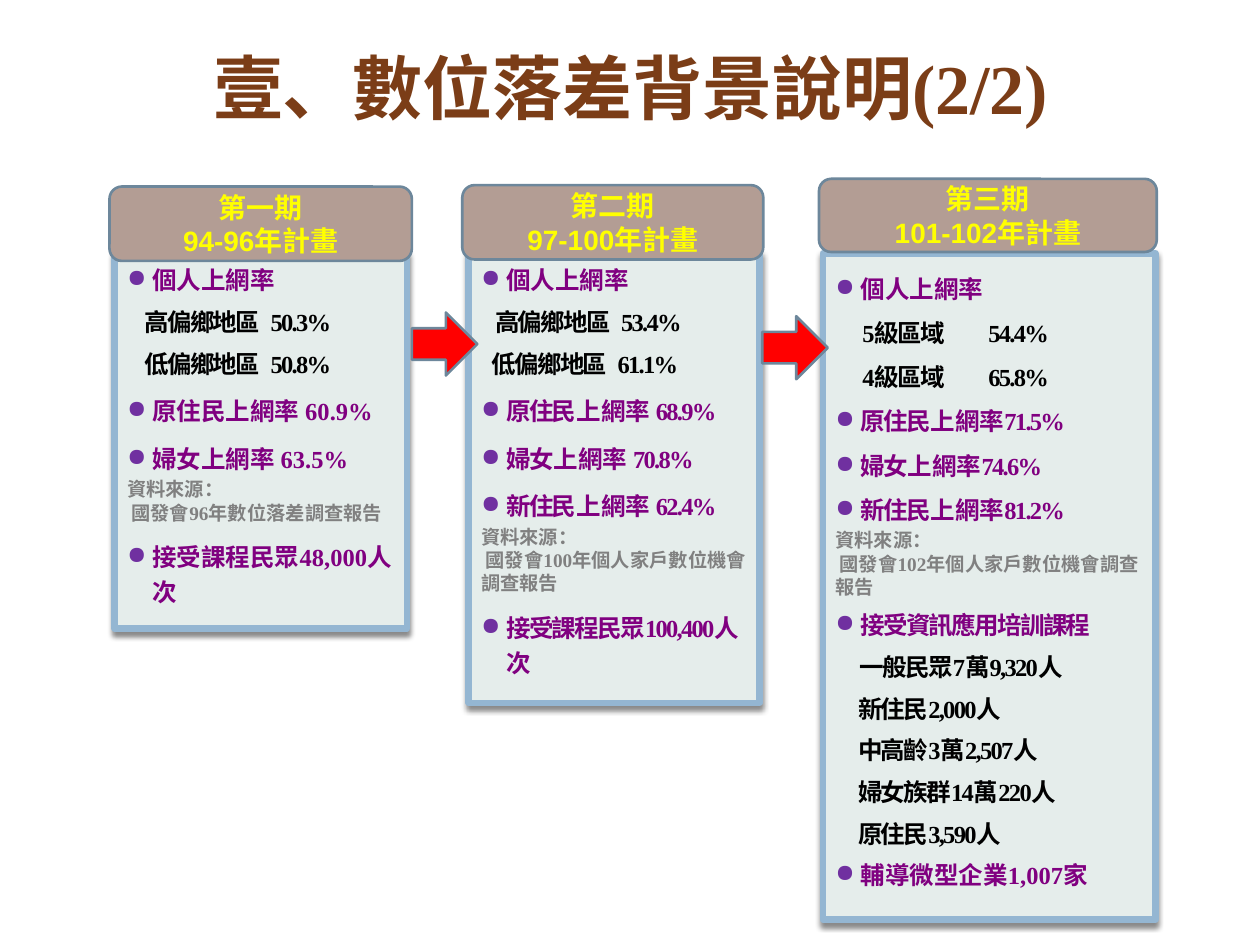
import pptx
import pptx.util
import pptx.dml.color
import pptx.enum.shapes
import pptx.enum.text
import pptx.oxml
import pptx.oxml.ns

Pt = pptx.util.Pt
Kind = pptx.enum.shapes.MSO_SHAPE
Align = pptx.enum.text.PP_ALIGN
Anchor = pptx.enum.text.MSO_ANCHOR
SERIF = "Times New Roman"
NS = pptx.oxml.ns.nsdecls("a")

TITLE = "壹、數位落差背景說明(2/2)"

# Parts between bars alternate between tight and normal letter spacing.
CARDS = [
    {"head": ["第一期", "94-96年計畫"], "tab": 87,
     "top": (62.6, 106.6, 172.8, 42.5), "size": (167, 214.6),
     "rows": [
         ("item", "|個人上網率"),
         ("rate", "高偏鄉地區\t50.3%", 10),
         ("rate", "低偏鄉地區\t50.8%", 10),
         ("item", "|原住民上網率 60.9%"),
         ("item", "|婦女上網率 63.5%"),
         ("label", "|資料來源："),
         ("source", "|國發會96年數位落差調查報告"),
         ("item", "|接受課程民眾48,000人次")]},
    {"head": ["第二期", "97-100年計畫"], "tab": 80,
     "top": (264.2, 105.8, 172, 42.5), "size": (166.3, 257),
     "rows": [
         ("item", "|個人上網率"),
         ("rate", "高偏鄉地區\t53.4%", 8),
         ("rate", "低偏鄉地區\t61.1%", 6),
         ("item", "原住民|上網率 |68.9%"),
         ("item", "婦女|上網率 |70.8%"),
         ("item", "新住民|上網率 |62.4%"),
         ("label", "|資料來源："),
         ("source", "|國發會100年個人家戶數位機會調查報告"),
         ("item", "接受課程民眾100,400人次")]},
    {"head": ["第三期", "101-102年計畫"], "tab": 74,
     "top": (468, 102.2, 193, 41.8), "size": (190, 380.9),
     "rows": [
         ("wide", "|個人上網率"),
         ("area", "5級區域\t54.4%", 15.5),
         ("area", "4級區域\t65.8%", 15.5),
         ("wide", "原住民|上網率|71.5%"),
         ("wide", "婦女|上網率|74.6%"),
         ("wide", "新住民|上網率|81.2%"),
         ("label", "|資料來源："),
         ("source", "|國發會102年個人家戶數位機會調查報告"),
         ("close", "接受資訊應用培訓課程"),
         ("rate", "一般民眾7萬9,320人", 14),
         ("rate", "新住民2,000人", 13),
         ("rate", "中高齡3萬2,507人", 13),
         ("rate", "婦女族群14萬220人", 13),
         ("rate", "原住民3,590人", 13),
         ("close", "|輔導微型企業1,007家")]},
]
ARROWS = [(235.4, 178.6), (435.6, 180.7)]

# Size, colour, line spacing, space before, bullet.
STYLES = {
    "item": (14, "800080", 1.2, 7, True),
    "wide": (14, "800080", 1.5, 0, True),
    "close": (14, "800080", 1.0, 7, True),
    "rate": (14, "000000", 1.0, 7, False),
    "area": (14, "000000", 1.5, 0, False),
    "label": (11, "808080", 1.2, 0, False),
    "source": (11, "808080", 1.0, 0, False),
}


def paint(target, code):
    target.rgb = pptx.dml.color.RGBColor.from_string(code)


def style(font, size, code, face):
    font.size, font.name, font.bold = Pt(size), face, True
    paint(font.color, code)


def add(kind, box, fill, line, width):
    shape = slide.shapes.add_shape(kind, *[Pt(n) for n in box])
    shape.shadow.inherit = False
    shape.fill.solid()
    paint(shape.fill.fore_color, fill)
    paint(shape.line.color, line)
    shape.line.width = Pt(width)
    return shape


def shade(shape):
    glow = shape.element.spPr.find(pptx.oxml.ns.qn("a:effectLst"))
    glow.append(pptx.oxml.parse_xml(
        f'<a:outerShdw {NS} blurRad="{Pt(3)}" dist="{Pt(2.4)}" dir="5400000" '
        'rotWithShape="0"><a:srgbClr val="000000"><a:alpha val="45000"/>'
        '</a:srgbClr></a:outerShdw>'))


def write(para, first, tab, name, text, left=0):
    size, code, space, gap, dot = STYLES[name]
    props = para._p.get_or_add_pPr()
    if dot:
        props.set("marL", str(Pt(14.4)))
        props.set("indent", str(-Pt(14.4)))
        marks = [f'<a:buClr {NS}><a:srgbClr val="7030A0"/></a:buClr>',
                 f'<a:buChar {NS} char="●"/>']
    else:
        props.set("marL", str(Pt(left)))
        props.set("indent", str(Pt(2.5 if name == "source" else 0)))
        marks = [f'<a:buNone {NS}/>']
    if "\t" in text:
        marks.append(f'<a:tabLst {NS}><a:tab pos="{Pt(tab)}" algn="l"/></a:tabLst>')
    for mark in marks:
        props.append(pptx.oxml.parse_xml(mark))
    para.alignment = Align.LEFT
    para.line_spacing = space
    para.space_before = Pt(0 if first else gap)
    for spot, part in enumerate(text.split("|")):
        if part:
            run = para.add_run()
            run.text = part
            style(run.font, size, code, SERIF)
            if spot % 2 == 0:
                run.font._element.set("spc", "-100")


deck = pptx.Presentation()
deck.slide_width, deck.slide_height = Pt(720), Pt(540)
slide = deck.slides.add_slide(deck.slide_layouts[5])

title = slide.shapes.title
title.left, title.top, title.width, title.height = Pt(54.7), Pt(4.3), Pt(611.3), Pt(90)
title.text_frame.text = TITLE
title.text_frame.vertical_anchor = Anchor.MIDDLE
title.text_frame.paragraphs[0].alignment = Align.CENTER
style(title.text_frame.paragraphs[0].runs[0].font, 40, "7B3D17", SERIF)

for spot, card in enumerate(CARDS):
    box = (65.5 + 202.35 * spot, 144.7, *card["size"])
    body = add(Kind.RECTANGLE, box, "E5EDEB", "94B6D2", 3.75)
    shade(body)
    frame = body.text_frame
    frame.word_wrap = True
    frame.vertical_anchor = Anchor.TOP
    for rank, row in enumerate(card["rows"]):
        para = frame.add_paragraph() if rank else frame.paragraphs[0]
        write(para, rank == 0, card["tab"], *row)

    head = add(Kind.ROUNDED_RECTANGLE, card["top"], "B39D94", "6D879B", 1.5)
    head.text_frame.text = "\n".join(card["head"])
    head.text_frame.vertical_anchor = Anchor.MIDDLE
    for para in head.text_frame.paragraphs:
        para.alignment = Align.CENTER
        style(para.runs[0].font, 16, "FFFF00", "Arial")

for place in ARROWS:
    add(Kind.RIGHT_ARROW, (*place, 37.4, 36), "FF0000", "6D879B", 1.5)

deck.save("out.pptx")
